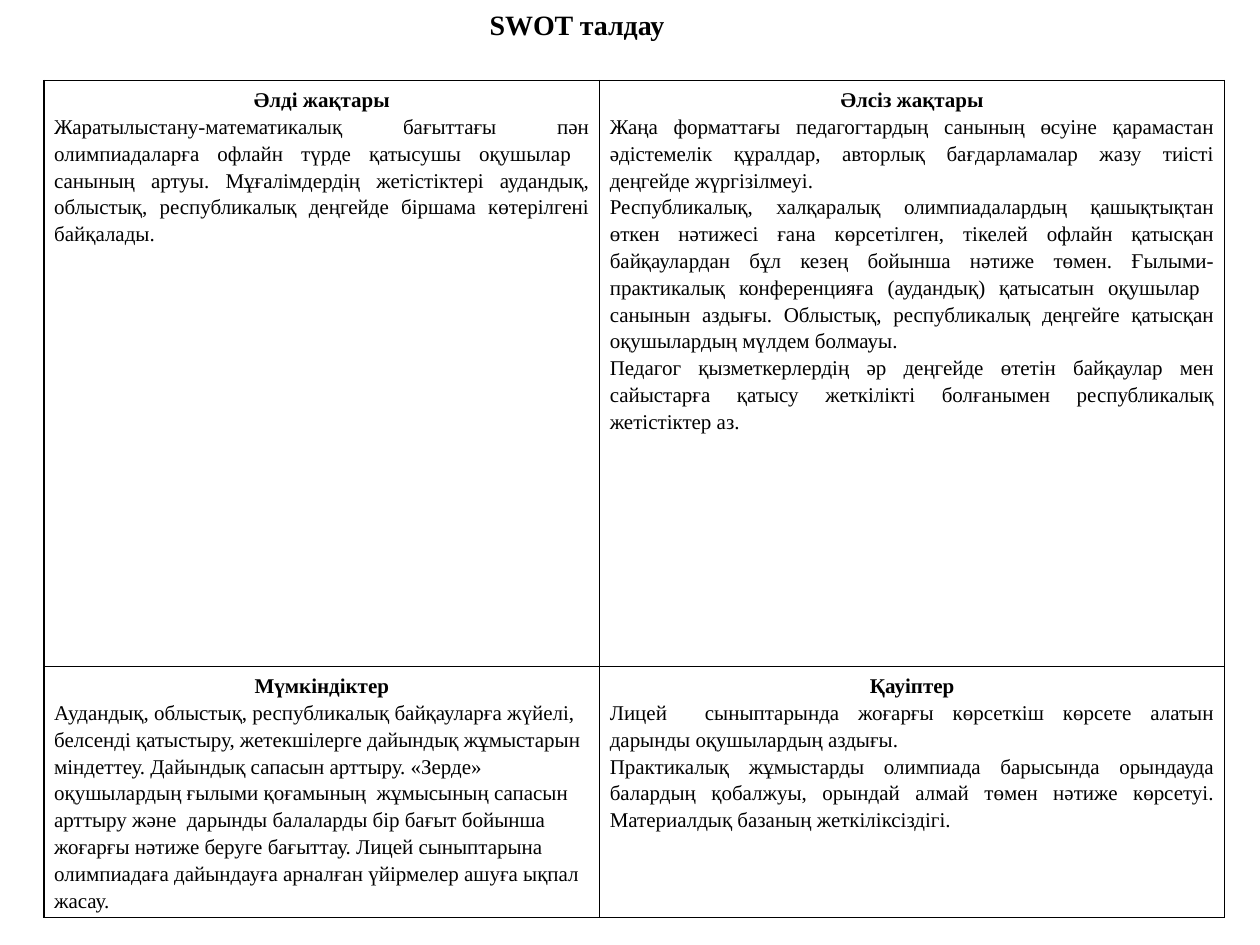
from lxml import etree
from pptx import Presentation
from pptx.dml.color import RGBColor
from pptx.enum.text import MSO_ANCHOR as Anchor, PP_ALIGN as Align
from pptx.oxml.ns import qn
from pptx.util import Inches, Pt

BLACK, WHITE = "000000", "FFFFFF"


def color(hex_value):
    return RGBColor.from_string(hex_value)


def apply(target, values):
    for name, value in values.items():
        setattr(target, name, value)


class SwotSlide:
    font = "Times New Roman"
    cell_format = {
        "margin_left": Inches(0.08), "margin_right": Inches(0.08),
        "margin_top": Inches(0.04), "margin_bottom": Inches(0.04),
        "vertical_anchor": Anchor.TOP,
    }

    def __init__(self, deck):
        self.slide = deck.slides.add_slide(deck.slide_layouts[6])

    def add_text(self, paragraph, text, size, bold=False, **layout):
        apply(paragraph, layout)
        run = paragraph.add_run()
        run.text = text
        apply(run.font, {"name": self.font, "size": Pt(size), "bold": bold})
        run.font.color.rgb = color(BLACK)

    def title(self, text, left, top, width, height, indent):
        box = self.slide.shapes.add_textbox(
            Inches(left), Inches(top), Inches(width), Inches(height))
        frame = box.text_frame
        apply(frame, {"word_wrap": True, "vertical_anchor": Anchor.TOP})
        heading = frame.paragraphs[0]
        self.add_text(heading, text, 16, bold=True, alignment=Align.CENTER)
        heading._p.get_or_add_pPr().set("indent", str(Inches(indent)))

    def borders(self, cell):
        properties = cell._tc.get_or_add_tcPr()
        for position, side in enumerate(("lnL", "lnR", "lnT", "lnB")):
            line = etree.Element(qn(f"a:{side}"), w=str(Pt(1)))
            fill = etree.SubElement(line, qn("a:solidFill"))
            etree.SubElement(fill, qn("a:srgbClr"), val=BLACK)
            properties.insert(position, line)

    def quadrant(self, cell, heading, body, **body_layout):
        apply(cell, self.cell_format)
        cell.fill.solid()
        cell.fill.fore_color.rgb = color(WHITE)
        self.borders(cell)
        frame = cell.text_frame
        self.add_text(frame.paragraphs[0], heading, 12, bold=True,
                      alignment=Align.CENTER, line_spacing=1.15)
        for text in body:
            self.add_text(frame.add_paragraph(), text, 12,
                          line_spacing=1.15, **body_layout)

    def matrix(self, quadrants, left, top, widths, heights):
        table = self.slide.shapes.add_table(
            len(heights), len(widths), Inches(left), Inches(top),
            Inches(sum(widths)), Inches(sum(heights))).table
        apply(table, {"first_row": False, "horz_banding": False})
        for column, width in zip(table.columns, widths):
            column.width = Inches(width)
        for row, height in zip(table.rows, heights):
            row.height = Inches(height)
        for cell, (heading, body, layout) in zip(table.iter_cells(), quadrants):
            self.quadrant(cell, heading, body, **layout)


JUSTIFIED = {"alignment": Align.JUSTIFY}
LEFT = {"alignment": Align.LEFT, "space_after": Pt(10)}

# Heading, paragraphs and body layout, row by row
QUADRANTS = [
    ("Әлді жақтары", [
        "Жаратылыстану-математикалық бағыттағы пән олимпиадаларға офлайн "
        "түрде қатысушы оқушылар  санының артуы. Мұғалімдердің жетістіктері "
        "аудандық, облыстық, республикалық деңгейде біршама көтерілгені "
        "байқалады.",
    ], JUSTIFIED),
    ("Әлсіз жақтары", [
        "Жаңа форматтағы педагогтардың санының өсуіне қарамастан әдістемелік "
        "құралдар, авторлық бағдарламалар жазу тиісті деңгейде жүргізілмеуі.",
        "Республикалық, халқаралық олимпиадалардың қашықтықтан өткен нәтижесі "
        "ғана көрсетілген, тікелей офлайн қатысқан байқаулардан бұл кезең "
        "бойынша нәтиже төмен. Ғылыми-практикалық конференцияға (аудандық) "
        "қатысатын оқушылар  санынын аздығы. Облыстық, республикалық деңгейге "
        "қатысқан оқушылардың мүлдем болмауы.",
        "Педагог қызметкерлердің әр деңгейде өтетін байқаулар мен сайыстарға "
        "қатысу жеткілікті болғанымен республикалық жетістіктер аз.",
    ], JUSTIFIED),
    ("Мүмкіндіктер", [
        "Аудандық, облыстық, республикалық байқауларға жүйелі, белсенді "
        "қатыстыру, жетекшілерге дайындық жұмыстарын міндеттеу. Дайындық "
        "сапасын арттыру. «Зерде» оқушылардың ғылыми қоғамының  жұмысының "
        "сапасын арттыру және  дарынды балаларды бір бағыт бойынша  жоғарғы "
        "нәтиже беруге бағыттау. Лицей сыныптарына олимпиадаға дайындауға "
        "арналған үйірмелер ашуға ықпал жасау.",
    ], LEFT),
    ("Қауіптер", [
        "Лицей  сыныптарында жоғарғы көрсеткіш көрсете алатын дарынды "
        "оқушылардың аздығы.",
        "Практикалық жұмыстарды олимпиада барысында орындауда балардың "
        "қобалжуы, орындай алмай төмен нәтиже көрсетуі. Материалдық базаның "
        "жеткіліксіздігі.",
    ], JUSTIFIED),
]


def main():
    deck = Presentation()
    apply(deck, {"slide_width": Inches(10), "slide_height": Inches(7.5)})
    swot = SwotSlide(deck)

    # SWOT matrix
    swot.matrix(QUADRANTS, 0.35, 0.64, widths=(4.41, 4.96), heights=(4.65, 1.85))

    # Title
    swot.title("SWOT талдау", 1.87, 0.01, 4.93, 0.67, indent=0.49)

    deck.save("out.pptx")


if __name__ == "__main__":
    main()
